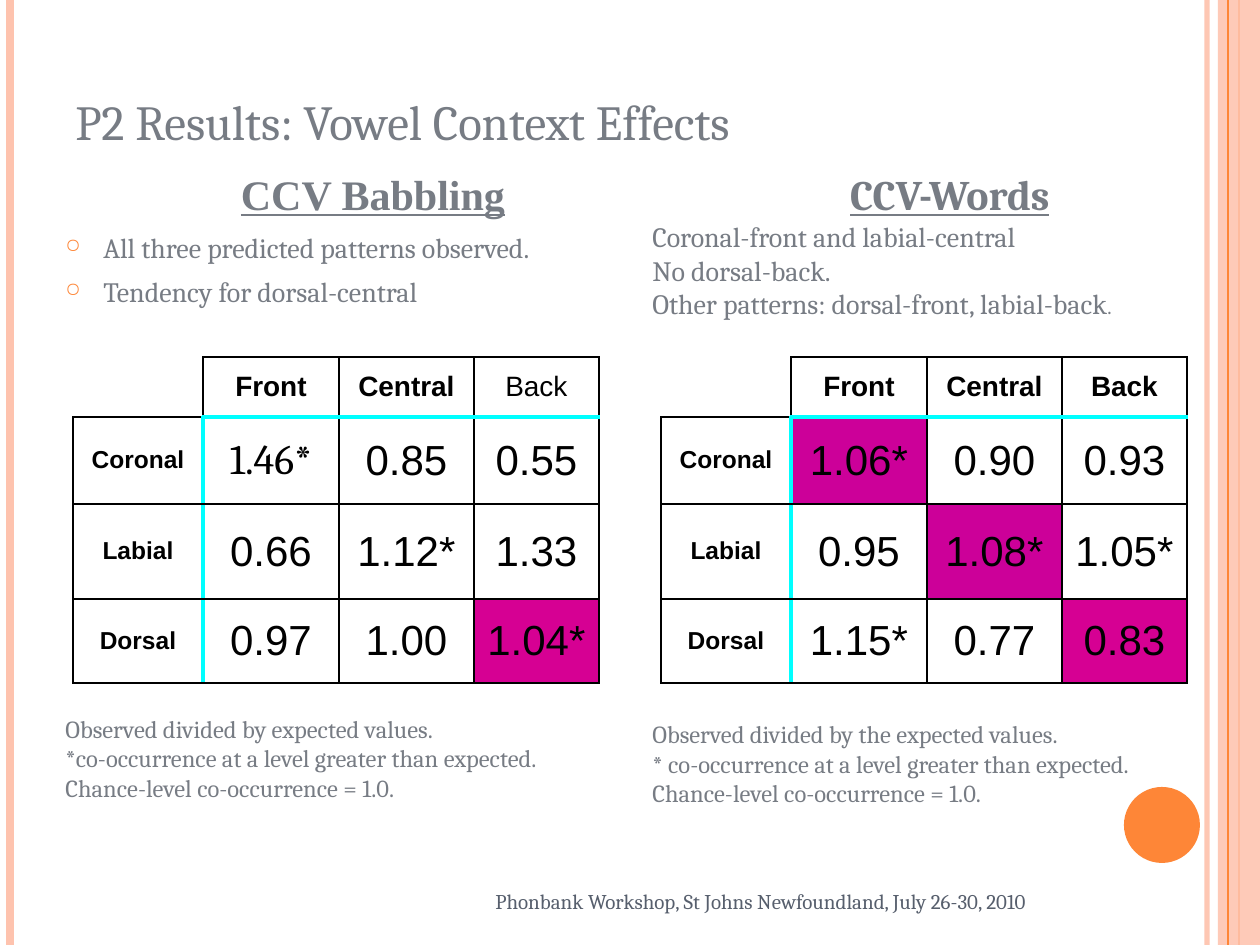
from lxml import etree
from pptx import Presentation
from pptx import util as u
from pptx.dml.color import RGBColor
from pptx.enum import shapes, text
from pptx.oxml import parse_xml
from pptx.oxml.ns import nsdecls, qn

PX = 7257  # EMU per px, 126 px to the inch
PEACH, ORANGE, GREY = "FEC3AE", "FE8637", "777C84"
BLACK, CYAN, MAGENTA, PINK = "000000", "00FFFF", "CC0099", "D60093"


def colour(hex_code):
    return RGBColor.from_string(hex_code)


def format_para(para, size, font="Cambria", hex_code=GREY, bold=False):
    """Give every run of the paragraph the same look."""
    for span in para.runs:
        span.font.size = u.Pt(size)
        span.font.name = font
        span.font.bold = bold
        span.font.color.rgb = colour(hex_code)


deck = Presentation()
deck.slide_width, deck.slide_height = u.Inches(10), u.Inches(7.5)
page = deck.slides.add_slide(deck.slide_layouts[6])

# Side stripes; the right-hand band lies between the stripes at 1239 and 1228
for x, hex_code, width, alpha in [(1207, PEACH, 3, 93), (10, PEACH, 4.5, 100),
                                  (1239, ORANGE, 1.5, 100), (1228, ORANGE, 0.75, 100)]:
    if x == 1228:
        band = page.shapes.add_shape(shapes.MSO_SHAPE.RECTANGLE,
                                     1218 * PX, 0, 42 * PX, 945 * PX)
        band.shadow.inherit = False
        band.fill.solid()
        band.fill.fore_color.rgb = colour(PEACH)
        band.line.fill.background()
        tint = band.fill._xPr.find(".//" + qn("a:srgbClr"))
        etree.SubElement(tint, qn("a:alpha"), val="87000")
    stripe = page.shapes.add_connector(shapes.MSO_CONNECTOR.STRAIGHT,
                                       x * PX, 0, x * PX, 945 * PX)
    stripe.line.color.rgb = colour(hex_code)
    stripe.line.width = u.Pt(width)
    properties = stripe._element.spPr
    if alpha < 100:
        tint = properties.find(".//" + qn("a:srgbClr"))
        etree.SubElement(tint, qn("a:alpha"), val=str(alpha * 1000))
    etree.SubElement(properties, qn("a:effectLst"))

disc = page.shapes.add_shape(shapes.MSO_SHAPE.OVAL, 1124 * PX, 787 * PX, 76 * PX, 76 * PX)
disc.shadow.inherit = False
disc.fill.solid()
disc.fill.fore_color.rgb = colour(ORANGE)
disc.line.fill.background()

# Title and footer
for words, left, top, width, height, size, hex_code, anchor in [
        ("P2 Results: Vowel Context Effects", 63, 63, 1040, 116, 28, GREY,
         text.MSO_ANCHOR.MIDDLE),
        ("Phonbank Workshop, St Johns Newfoundland, July 26-30, 2010",
         483, 882, 650, 77, 12, "575F6D", text.MSO_ANCHOR.TOP)]:
    box = page.shapes.add_textbox(left * PX, top * PX, width * PX, height * PX)
    box.text_frame.word_wrap = True
    box.text_frame.vertical_anchor = anchor
    box.text_frame.text = words
    format_para(box.text_frame.paragraphs[0], size, hex_code=hex_code)

# Two halves: heading, findings, table, notes
halves = [
    dict(left=53, width=640, table_left=73, heading="CCV Babbling",
         heading_font="Times New Roman", bullets=True, note_gap=232,
         findings=["All three predicted patterns observed.",
                   "Tendency for dorsal-central"],
         notes=["Observed divided by expected values.",
                "*co-occurrence at a level greater than expected.",
                "Chance-level co-occurrence = 1.0."],
         values=[["1.46*", "0.85", "0.55"],
                 ["0.66", "1.12*", "1.33"],
                 ["0.97", "1.00", "1.04*"]],
         fills={(3, 3): PINK}, plain_header="Back", serif_value="1.46*"),
    dict(left=640, width=620, table_left=661, heading="CCV-Words",
         heading_font="Cambria", bullets=False, note_gap=228,
         findings=["Coronal-front and labial-central", "No dorsal-back.",
                   "Other patterns: dorsal-front, labial-back"],
         notes=["Observed divided by the expected values.",
                "* co-occurrence at a level greater than expected.",
                "Chance-level co-occurrence = 1.0."],
         values=[["1.06*", "0.90", "0.93"],
                 ["0.95", "1.08*", "1.05*"],
                 ["1.15*", "0.77", "0.83"]],
         fills={(1, 1): MAGENTA, (2, 2): MAGENTA, (3, 3): PINK},
         plain_header=None, serif_value=None),
]
column_widths = [130, 136, 135, 125]
row_heights = [60, 87, 95, 84]
places = ["Coronal", "Labial", "Dorsal"]

for half in halves:
    box = page.shapes.add_textbox(half["left"] * PX, 168 * PX, half["width"] * PX, 683 * PX)
    frame = box.text_frame
    frame.word_wrap = True
    frame.text = half["heading"]
    heading = frame.paragraphs[0]
    heading.alignment = text.PP_ALIGN.CENTER
    heading.line_spacing = 0.9
    heading.space_before = u.Pt(2)
    format_para(heading, 24, half["heading_font"], bold=True)
    heading.runs[0].font.underline = True

    for finding in half["findings"]:
        para = frame.add_paragraph()
        para.text = finding
        format_para(para, 16)
        if half["bullets"]:
            para.space_before = u.Pt(6)
            settings = para._p.get_or_add_pPr()
            settings.set("marL", str(38 * PX))
            settings.set("indent", str(-38 * PX))
            tint = etree.SubElement(settings, qn("a:buClr"))
            etree.SubElement(tint, qn("a:srgbClr"), val=ORANGE)
            etree.SubElement(settings, qn("a:buSzPct"), val="70000")
            etree.SubElement(settings, qn("a:buChar"), char="○")
    if not half["bullets"]:
        stop = para.add_run()
        stop.text = "."
        format_para(para, 16)
        stop.font.size = u.Pt(12)

    for number, note in enumerate(half["notes"]):
        para = frame.add_paragraph()
        para.text = note
        para.space_before = u.Pt(0 if number else half["note_gap"])
        format_para(para, 14)

    table = page.shapes.add_table(4, 4, half["table_left"] * PX, 357 * PX,
                                  sum(column_widths) * PX, sum(row_heights) * PX).table
    table.first_row = table.horz_banding = False
    for column, width in zip(table.columns, column_widths):
        column.width = width * PX
    for row, height in zip(table.rows, row_heights):
        row.height = height * PX

    grid = [["", "Front", "Central", "Back"]]
    grid += [[place] + values for place, values in zip(places, half["values"])]
    for r, entries in enumerate(grid):
        for c, entry in enumerate(entries):
            cell = table.cell(r, c)
            cell.vertical_anchor = text.MSO_ANCHOR.MIDDLE
            cell.text = entry
            para = cell.text_frame.paragraphs[0]
            para.alignment = text.PP_ALIGN.CENTER
            size = 16 if r == 0 else 14 if c == 0 else 24
            font = "Cambria" if entry == half["serif_value"] else "Arial"
            bold = (r == 0 or c == 0) and entry != half["plain_header"]
            format_para(para, size, font, BLACK, bold)

            # Cyan rules part the headers from the values
            thick = {"L": r > 0 and c == 1, "R": r > 0 and c == 0,
                     "T": r == 1 and c > 0, "B": r == 0 and c > 0}
            for side, is_thick in thick.items():
                if r == c == 0 and side in "LT":
                    paint = "<a:noFill/>"
                else:
                    paint = (f'<a:solidFill><a:srgbClr val="{CYAN if is_thick else BLACK}"/>'
                             "</a:solidFill>")
                cell._tc.get_or_add_tcPr().append(parse_xml(
                    f'<a:ln{side} {nsdecls("a")} w="{u.Pt(3 if is_thick else 1)}">'
                    f"{paint}</a:ln{side}>"))
            if (r, c) in half["fills"]:
                cell.fill.solid()
                cell.fill.fore_color.rgb = colour(half["fills"][r, c])
            else:
                cell.fill.background()

deck.save("out.pptx")
